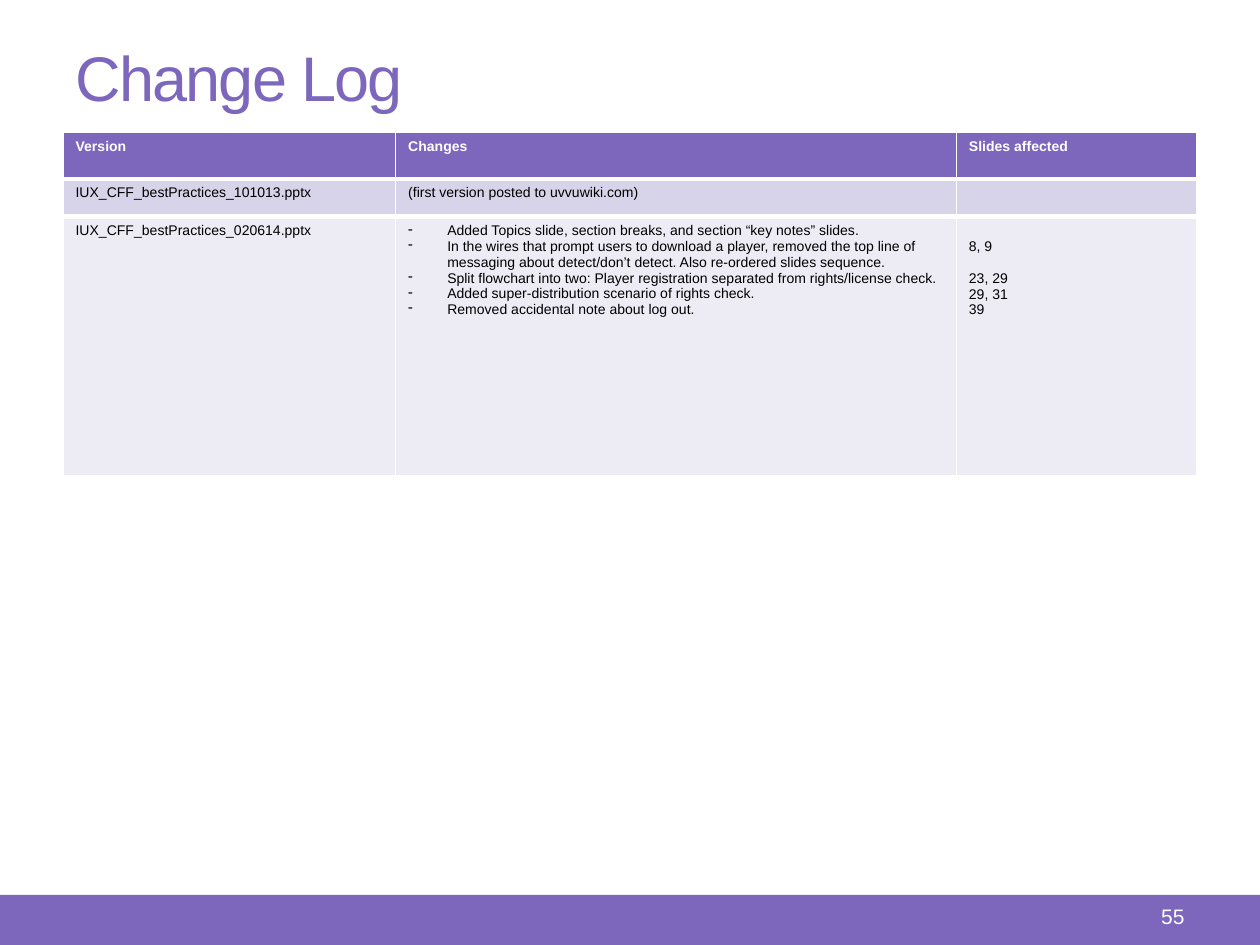
from lxml import etree
from pptx import Presentation
from pptx.dml.color import RGBColor
from pptx.enum.shapes import MSO_SHAPE
from pptx.enum.text import MSO_ANCHOR, PP_ALIGN
from pptx.oxml.ns import qn
from pptx.util import Inches, Pt

RECTANGLE = MSO_SHAPE.RECTANGLE
MIDDLE, TOP = MSO_ANCHOR.MIDDLE, MSO_ANCHOR.TOP
LEFT, RIGHT = PP_ALIGN.LEFT, PP_ALIGN.RIGHT

THEME = {
    "font": "Arial",
    "purple": "7D67BD",
    "white": "FFFFFF",
    "black": "000000",
    "row_fills": ["7D67BD", "D7D3E8", "EDEBF4"],
    "title_size": 36,
    "number_size": 12,
    "table_size": 8,
    "thin_line": 1,
    "thick_line": 3,
}
WIDTH, HEIGHT = Inches(10), Inches(7.5)
MARGIN = int(WIDTH * 0.05)
CONTENT_WIDTH = WIDTH - 2 * MARGIN
BAR_TOP = int(HEIGHT * 0.947)
COLUMNS = [Inches(width) for width in (2.64, 4.45, 1.91)]
ROWS = [Inches(height) for height in (0.37, 0.3, 2.06)]
HANGING_INDENT = Inches(0.31)
LINE_HEIGHT = Pt(9.1)

VERSIONS = [
    (["Version"], ["Changes"], ["Slides affected"]),
    (["IUX_CFF_bestPractices_101013.pptx"], ["(first version posted to uvvuwiki.com)"], []),
    (
        ["IUX_CFF_bestPractices_020614.pptx"],
        [
            "Added Topics slide, section breaks, and section “key notes” slides.",
            "In the wires that prompt users to download a player, removed the top line of "
            "messaging about detect/don’t detect. Also re-ordered slides sequence.",
            "Split flowchart into two: Player registration separated from rights/license check.",
            "Added super-distribution scenario of rights check.",
            "Removed accidental note about log out.",
        ],
        ["8, 9", "23, 29", "29, 31", "39"],
    ),
]


def write(paragraph, text, size, color, bold=False):
    run = paragraph.add_run()
    run.text = text
    formats = {"name": THEME["font"], "size": Pt(size), "bold": bold}
    for name, value in formats.items():
        setattr(run.font, name, value)
    run.font.color.rgb = RGBColor.from_string(color)
    return run


def add_border(cell, side, points):
    properties = cell._tc.get_or_add_tcPr()
    line = etree.SubElement(properties, qn(f"a:ln{side}"), w=str(Pt(points)))
    fill = etree.SubElement(line, qn("a:solidFill"))
    etree.SubElement(fill, qn("a:srgbClr"), val=THEME["white"])


presentation = Presentation()
presentation.slide_width, presentation.slide_height = WIDTH, HEIGHT
slide = presentation.slides.add_slide(presentation.slide_layouts[6])

footer_bar = slide.shapes.add_shape(RECTANGLE, 0, BAR_TOP, WIDTH, HEIGHT - BAR_TOP)
footer_bar.shadow.inherit = False
footer_bar.fill.solid()
footer_bar.fill.fore_color.rgb = RGBColor.from_string(THEME["purple"])
footer_bar.line.fill.background()

number_width = int(CONTENT_WIDTH * 0.13)
labels = [
    ("Change Log", MARGIN, Inches(0.25), CONTENT_WIDTH, Inches(0.71),
     THEME["title_size"], THEME["purple"], MIDDLE, LEFT, -100),
    ("55", WIDTH - MARGIN - number_width, Inches(7.12), number_width, Inches(0.36),
     THEME["number_size"], THEME["white"], TOP, RIGHT, 0),
]
for text, left, top, width, height, size, color, anchor, alignment, spacing in labels:
    frame = slide.shapes.add_textbox(left, top, width, height).text_frame
    frame.word_wrap = True
    frame.vertical_anchor = anchor
    paragraph = frame.paragraphs[0]
    paragraph.alignment = alignment
    run = write(paragraph, text, size, color)
    run._r.get_or_add_rPr().set("spc", str(spacing))

table = slide.shapes.add_table(
    len(ROWS), len(COLUMNS), MARGIN, Inches(1.05), sum(COLUMNS), sum(ROWS)
).table
for column, width in zip(table.columns, COLUMNS):
    column.width = width
for row, height in zip(table.rows, ROWS):
    row.height = height

for row_index, version in enumerate(VERSIONS):
    is_header = row_index == 0
    is_last = row_index == len(VERSIONS) - 1
    text_color = THEME["white"] if is_header else THEME["black"]
    borders = {
        "L": THEME["thin_line"],
        "R": THEME["thin_line"],
        "T": THEME["thin_line"] if is_header else THEME["thick_line"],
        "B": THEME["thin_line"] if is_last else THEME["thick_line"],
    }
    for column_index, lines in enumerate(version):
        cell = table.cell(row_index, column_index)
        for side, points in borders.items():
            add_border(cell, side, points)
        cell.fill.solid()
        cell.fill.fore_color.rgb = RGBColor.from_string(THEME["row_fills"][row_index])
        frame = cell.text_frame
        if not lines:
            etree.SubElement(frame.paragraphs[0]._p, qn("a:endParaRPr"),
                             sz=str(THEME["table_size"] * 100))
        for line_index, text in enumerate(lines):
            paragraph = frame.add_paragraph() if line_index else frame.paragraphs[0]
            if is_last and column_index == 1:
                properties = paragraph._p.get_or_add_pPr()
                properties.set("marL", str(HANGING_INDENT))
                properties.set("indent", str(-HANGING_INDENT))
                etree.SubElement(properties, qn("a:buChar"), char="-")
            write(paragraph, text, THEME["table_size"], text_color, is_header)

affected_slides = table.cell(len(ROWS) - 1, len(COLUMNS) - 1)
affected_slides.margin_top = Inches(0.05) + LINE_HEIGHT
affected_slides.text_frame.paragraphs[1].space_before = LINE_HEIGHT

presentation.save("out.pptx")
